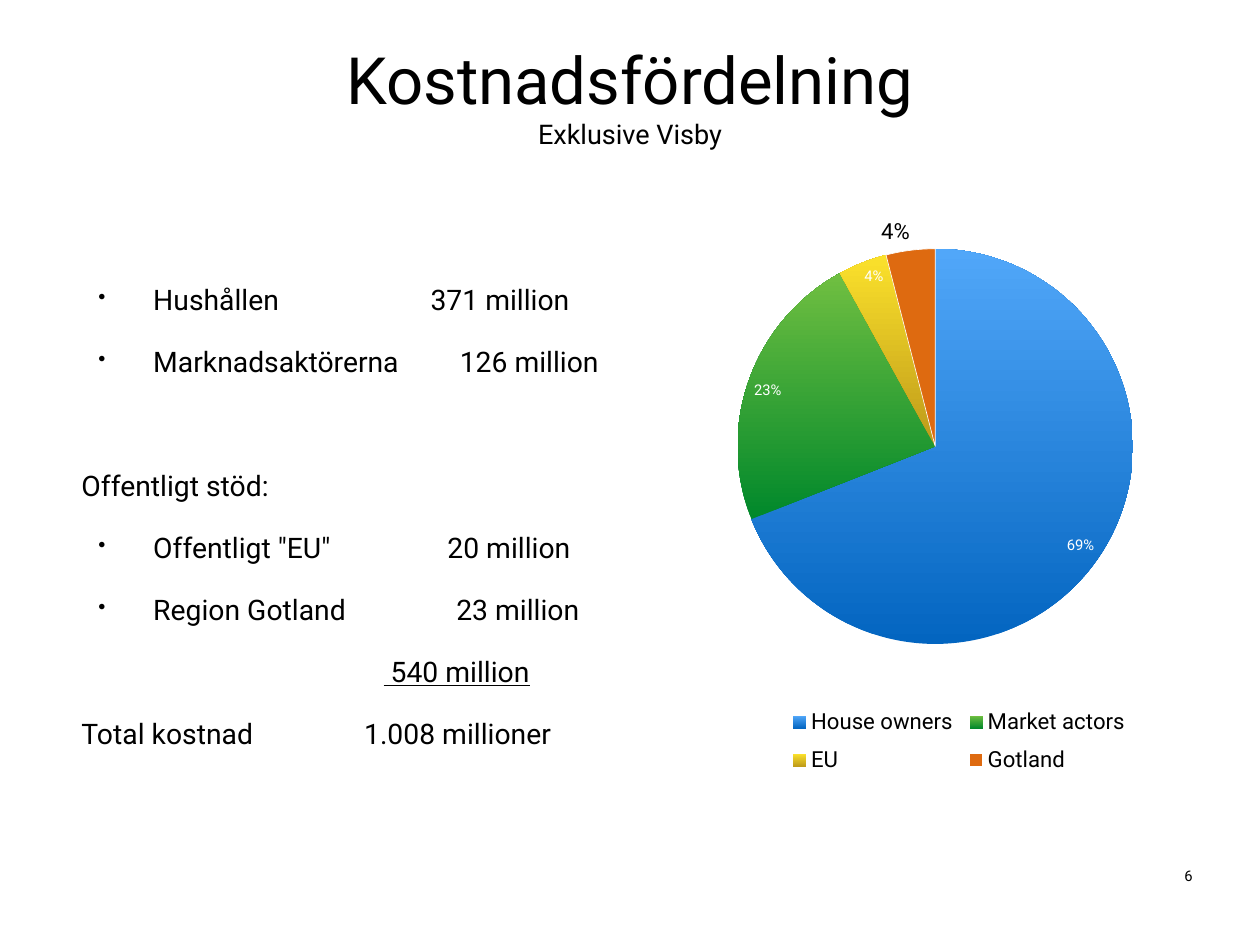
import pptx
import pptx.chart.data
import pptx.dml.color
import pptx.enum.chart
import pptx.enum.text
import pptx.oxml
import pptx.oxml.ns
import pptx.util
from pptx.util import Inches

BLACK = pptx.dml.color.RGBColor(0x00, 0x00, 0x00)
WHITE = pptx.dml.color.RGBColor(0xFF, 0xFF, 0xFF)
BLUE = (pptx.dml.color.RGBColor(0x03, 0x65, 0xC0), pptx.dml.color.RGBColor(0x51, 0xA7, 0xF9))
GREEN = (pptx.dml.color.RGBColor(0x00, 0x88, 0x2B), pptx.dml.color.RGBColor(0x70, 0xBF, 0x41))
YELLOW = (pptx.dml.color.RGBColor(0xBE, 0x9A, 0x1A), pptx.dml.color.RGBColor(0xFB, 0xE1, 0x2B))
ORANGE = pptx.dml.color.RGBColor(0xDE, 0x6A, 0x10)

FONT = "Roboto"
ROW_GAP = 20
ROW_PITCH = 50.4
LIST_LEFT, LIST_TOP, LIST_WIDTH, LIST_HEIGHT = 0.67, 3.14, 6.67, 5.34
AMOUNT_LEFT = 4.11

# Row number, label, bulleted
COST_LABELS = [
    (0, "Hushållen", True),
    (1, "Marknadsaktörerna", True),
    (3, "Offentligt stöd:", False),
    (4, 'Offentligt "EU"', True),
    (5, "Region Gotland", True),
    (7, "Total kostnad", False),
]
# Row number, amount, left edge in inches
COST_AMOUNTS = [
    (0, "371 million", 4.86),
    (1, "126 million", 5.19),
    (4, "20 million", 5.05),
    (5, "23 million", 5.15),
    (6, " 540 million", 4.33),
    (7, "1.008 millioner", 4.11),
]
SHARES = [
    ("House owners", 69, BLUE),
    ("Market actors", 23, GREEN),
    ("EU", 4, YELLOW),
    ("Gotland", 4, ORANGE),
]


def style_font(font, size, color=BLACK):
    font.name = FONT
    font.size = pptx.util.Pt(size)
    font.color.rgb = color


def set_frame(text_frame, inset=0, wrap=True):
    text_frame.auto_size = pptx.enum.text.MSO_AUTO_SIZE.NONE
    text_frame.word_wrap = wrap
    text_frame.vertical_anchor = pptx.enum.text.MSO_ANCHOR.MIDDLE
    text_frame.margin_left = text_frame.margin_right = Inches(inset)
    text_frame.margin_top = text_frame.margin_bottom = Inches(inset)


def add_text_box(slide, left, top, width, height, text, inset=0, wrap=True):
    box = slide.shapes.add_textbox(Inches(left), Inches(top), Inches(width), Inches(height))
    set_frame(box.text_frame, inset, wrap)
    box.text_frame.text = text
    return box.text_frame


def set_indent(paragraph, left, first_line, bulleted=False):
    properties = paragraph._p.get_or_add_pPr()
    properties.set("marL", str(Inches(left)))
    properties.set("indent", str(Inches(first_line)))
    if bulleted:
        size = pptx.oxml.ns.qn("a:buSzPct")
        properties.append(properties.makeelement(size, {"val": "75000"}))
        bullet = pptx.oxml.ns.qn("a:buChar")
        properties.append(properties.makeelement(bullet, {"char": "•"}))


def space_rows(text_frame, rows):
    """Put each paragraph on its numbered row."""
    previous = None
    for paragraph, row in zip(text_frame.paragraphs, rows):
        paragraph.line_spacing = 1.1
        if previous is not None:
            skipped = row - previous - 1
            paragraph.space_before = pptx.util.Pt(ROW_GAP + skipped * ROW_PITCH)
        previous = row
        style_font(paragraph.runs[0].font, 23)


def add_title(slide):
    title = slide.shapes.title
    title.left, title.top = Inches(1.04), Inches(0.43)
    title.width, title.height = Inches(12.14), Inches(1.28)
    set_frame(title.text_frame)
    title.text_frame.text = "Kostnadsfördelning\nExklusive Visby"
    for paragraph, size in zip(title.text_frame.paragraphs, (53, 22)):
        paragraph.alignment = pptx.enum.text.PP_ALIGN.CENTER
        style_font(paragraph.runs[0].font, size)


def add_cost_list(slide):
    # Labels
    labels = add_text_box(slide, LIST_LEFT, LIST_TOP, LIST_WIDTH, LIST_HEIGHT,
                          "\n".join(label for _, label, _ in COST_LABELS))
    for paragraph, (_, _, bulleted) in zip(labels.paragraphs, COST_LABELS):
        left, first_line = (1.06, -0.62) if bulleted else (0, 0.25)
        set_indent(paragraph, left, first_line, bulleted)
    space_rows(labels, [row for row, _, _ in COST_LABELS])

    # Amounts
    amounts = add_text_box(slide, AMOUNT_LEFT, LIST_TOP, LIST_LEFT + LIST_WIDTH - AMOUNT_LEFT,
                           LIST_HEIGHT, "\n".join(amount for _, amount, _ in COST_AMOUNTS))
    for paragraph, (row, _, left) in zip(amounts.paragraphs, COST_AMOUNTS):
        set_indent(paragraph, left - AMOUNT_LEFT, 0)
        paragraph.runs[0].font.underline = True if row == 6 else None
    space_rows(amounts, [row for row, _, _ in COST_AMOUNTS])


def manual_layout(x, y, width, height, inner=False):
    target = '<c:layoutTarget val="inner"/>' if inner else ""
    return pptx.oxml.parse_xml(
        f'<c:layout {pptx.oxml.ns.nsdecls("c")}><c:manualLayout>{target}'
        '<c:xMode val="edge"/><c:yMode val="edge"/>'
        f'<c:x val="{x}"/><c:y val="{y}"/><c:w val="{width}"/><c:h val="{height}"/>'
        '</c:manualLayout></c:layout>')


def replace_layout(parent, layout, position):
    for old in parent.findall(pptx.oxml.ns.qn("c:layout")):
        parent.remove(old)
    parent.insert(position, layout)


def fill_slice(point, color):
    fill = point.format.fill
    if isinstance(color, pptx.dml.color.RGBColor):
        fill.solid()
        fill.fore_color.rgb = color
        point.format.line.color.rgb = WHITE
        point.format.line.width = pptx.util.Pt(0.5)
    else:
        fill.gradient()
        fill.gradient_angle = 90
        for stop, stop_color in zip(fill.gradient_stops, color):
            stop.color.rgb = stop_color
        point.format.line.fill.background()


def add_share_chart(slide):
    data = pptx.chart.data.CategoryChartData()
    data.categories = [name for name, _, _ in SHARES]
    data.add_series("Series 1", [value for _, value, _ in SHARES])
    chart = slide.shapes.add_chart(
        pptx.enum.chart.XL_CHART_TYPE.PIE, Inches(7.88), Inches(2.41),
        Inches(5.35), Inches(6.66), data).chart
    style_font(chart.font, 10)
    chart.has_title = False
    plot = chart.plots[0]
    plot.vary_by_categories = True
    replace_layout(chart._chartSpace.chart.plotArea,
                   manual_layout(0.07, 0.06, 0.86, 0.67, inner=True), 0)

    # Slices
    points = plot.series[0].points
    for index, (_, _, color) in enumerate(SHARES):
        fill_slice(points[index], color)

    # Percentages, with the last one outside its slice
    labels = plot.series[0].data_labels
    labels.show_value = False
    labels.show_percentage = True
    labels.number_format = "#,##0%"
    labels.number_format_is_linked = False
    labels.position = pptx.enum.chart.XL_LABEL_POSITION.INSIDE_END
    style_font(labels.font, 12, WHITE)
    outside = points[len(SHARES) - 1].data_label
    style_font(outside.font, 18)
    outside.position = pptx.enum.chart.XL_LABEL_POSITION.OUTSIDE_END
    element = outside._dLbl
    element.find(pptx.oxml.ns.qn("c:showVal")).set("val", "0")
    element.find(pptx.oxml.ns.qn("c:showPercent")).set("val", "1")

    # Legend
    chart.has_legend = True
    chart.legend.position = pptx.enum.chart.XL_LEGEND_POSITION.BOTTOM
    chart.legend.include_in_layout = True
    style_font(chart.legend.font, 18)
    replace_layout(chart.legend._element, manual_layout(0.18, 0.82, 0.74, 0.15), 1)


def add_page_number(slide):
    frame = add_text_box(slide, 13.3, 9.74, 0.21, 0.29, "6", inset=0.05, wrap=False)
    frame.paragraphs[0].alignment = pptx.enum.text.PP_ALIGN.RIGHT
    style_font(frame.paragraphs[0].runs[0].font, 12)


def main():
    presentation = pptx.Presentation()
    presentation.slide_width = Inches(14.22)
    presentation.slide_height = Inches(10.67)
    slide = presentation.slides.add_slide(presentation.slide_layouts[5])
    add_title(slide)
    add_cost_list(slide)
    add_share_chart(slide)
    add_page_number(slide)
    presentation.save("out.pptx")


if __name__ == "__main__":
    main()
